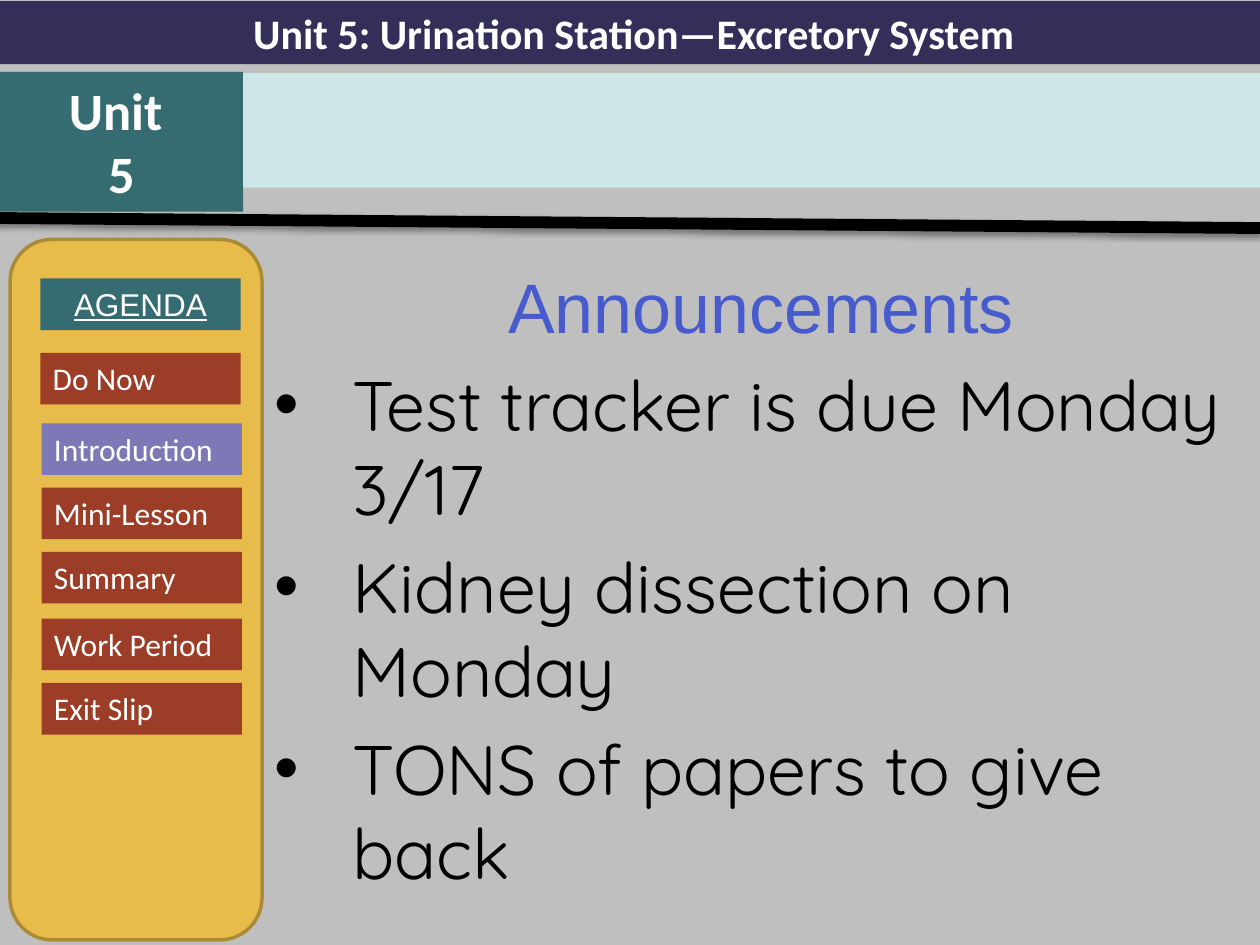
from lxml import etree
from pptx import Presentation
from pptx import util as u
from pptx.dml.color import RGBColor
from pptx.enum import shapes, text
from pptx.oxml import ns

HUE = {
    "back": "BFBFBF", "navy": "342F59", "teal": "346C71", "pale": "CDE6E8",
    "gold": "E8BC4A", "edge": "AC8B37", "rust": "9C3D28", "lilac": "7E78B7",
    "blue": "475BCD", "black": "000000", "white": "FFFFFF",
}
RECT = shapes.MSO_SHAPE.RECTANGLE
LEFT, MID = text.PP_ALIGN.LEFT, text.PP_ALIGN.CENTER


def put(par, words, size, face, hue, align=LEFT):
    """Write one styled run into a paragraph and return its font."""
    par.alignment = align
    run = par.add_run()
    run.text = words
    font = run.font
    font.size, font.name = u.Pt(size), face
    font.color.rgb = RGBColor.from_string(HUE[hue])
    return font


def block(home, x, y, w, h, hue, form=RECT):
    """Add a plain filled shape with no outline."""
    box = home.add_shape(form, u.Inches(x), u.Inches(y), u.Inches(w), u.Inches(h))
    box.shadow.inherit = False
    box.fill.solid()
    box.fill.fore_color.rgb = RGBColor.from_string(HUE[hue])
    box.line.fill.background()
    box.text_frame.word_wrap = True
    box.text_frame.vertical_anchor = text.MSO_ANCHOR.TOP
    return box


deck = Presentation()
deck.slide_width, deck.slide_height = u.Inches(10), u.Inches(7.5)
slide = deck.slides.add_slide(deck.slide_layouts[6])
slide.background.fill.solid()
slide.background.fill.fore_color.rgb = RGBColor.from_string(HUE["back"])
tree = slide.shapes

# Announcements
body = tree.add_textbox(u.Inches(2.08), u.Inches(2.04), u.Inches(7.92), u.Inches(5.46))
frame = body.text_frame
frame.word_wrap = True
head = frame.paragraphs[0]
head.space_before = u.Pt(8)
put(head, "Announcements", 40, "Arial", "blue", MID)
for news in ("Test tracker is due Monday 3/17",
             "Kidney dissection on Monday",
             "TONS of papers to give back"):
    par = frame.add_paragraph()
    par.space_before = u.Pt(8)
    put(par, news, 40, "Quicksand", "black")
    props = par._p.get_or_add_pPr()
    props.set("marL", str(u.Inches(0.62)))
    props.set("indent", str(-u.Inches(0.62)))
    etree.SubElement(props, ns.qn("a:buFont")).set("typeface", "Arial")
    etree.SubElement(props, ns.qn("a:buChar")).set("char", "•")

# Banner
bar = block(tree, 0, 0.01, 10.06, 0.5, "navy")
put(bar.text_frame.paragraphs[0], "Unit 5: Urination Station—Excretory System",
    24, "Calibri", "white", MID).bold = True
unit = block(tree, 0, 0.57, 1.93, 1.11, "teal").text_frame
put(unit.paragraphs[0], "Unit ", 30, "Calibri", "white", MID).bold = True
put(unit.add_paragraph(), "5", 30, "Calibri", "white", MID).bold = True
block(tree, 1.93, 0.58, 8.1, 0.91, "pale")

# Divider with a soft shadow below
rule = tree.add_connector(shapes.MSO_CONNECTOR.STRAIGHT, u.Inches(-0.05),
                          u.Inches(1.73), u.Inches(10), u.Inches(1.81))
rule.line.color.rgb = RGBColor.from_string(HUE["black"])
rule.line.width = u.Pt(6.75)
effect = etree.SubElement(rule._element.spPr, ns.qn("a:effectLst"))
shade = etree.SubElement(effect, ns.qn("a:outerShdw"), blurRad=str(u.Pt(3.1)),
                         dist=str(u.Pt(1.6)), dir="5400000", rotWithShape="0")
tint = etree.SubElement(shade, ns.qn("a:srgbClr"), val=HUE["black"])
etree.SubElement(tint, ns.qn("a:alpha"), val="38000")

# Agenda
group = tree.add_group_shape()
panel = block(group.shapes, 0.08, 1.9, 2, 5.56, "gold",
              shapes.MSO_SHAPE.ROUNDED_RECTANGLE)
panel.line.color.rgb = RGBColor.from_string(HUE["edge"])
panel.line.width = u.Pt(2)
title = block(group.shapes, 0.32, 2.21, 1.59, 0.41, "teal")
put(title.text_frame.paragraphs[0], "AGENDA", 18, "Arial", "white", MID).underline = True
for label, home, x, y, hue in (
        ("Introduction", group.shapes, 0.33, 3.36, "lilac"),
        ("Mini-Lesson", group.shapes, 0.33, 3.87, "rust"),
        ("Summary", group.shapes, 0.33, 4.38, "rust"),
        ("Work Period", group.shapes, 0.33, 4.91, "rust"),
        ("Exit Slip", group.shapes, 0.33, 5.42, "rust"),
        ("Do Now", tree, 0.32, 2.8, "rust")):
    step = block(home, x, y, 1.59, 0.41, hue)
    put(step.text_frame.paragraphs[0], label, 18, "Calibri", "white")

deck.save("out.pptx")
